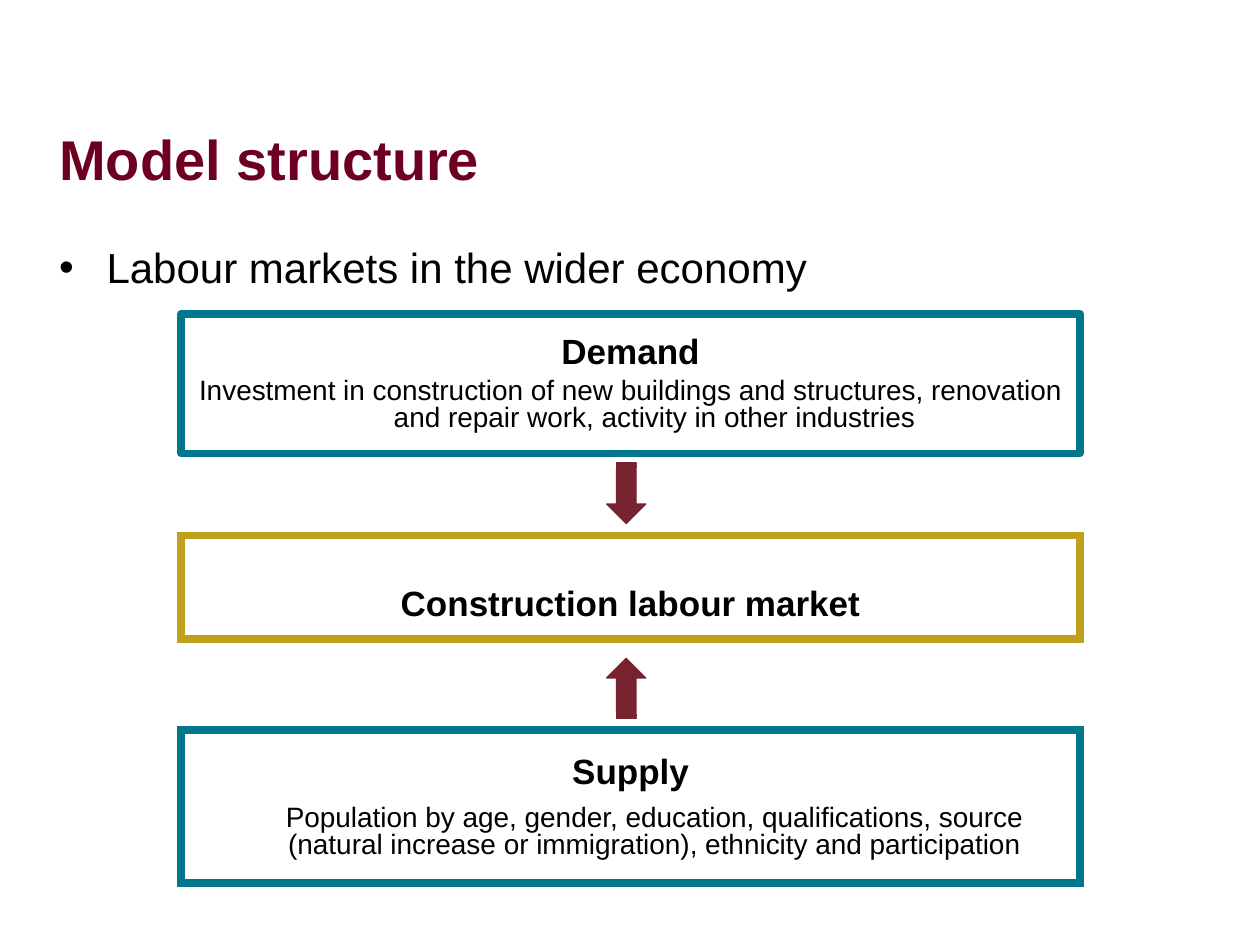
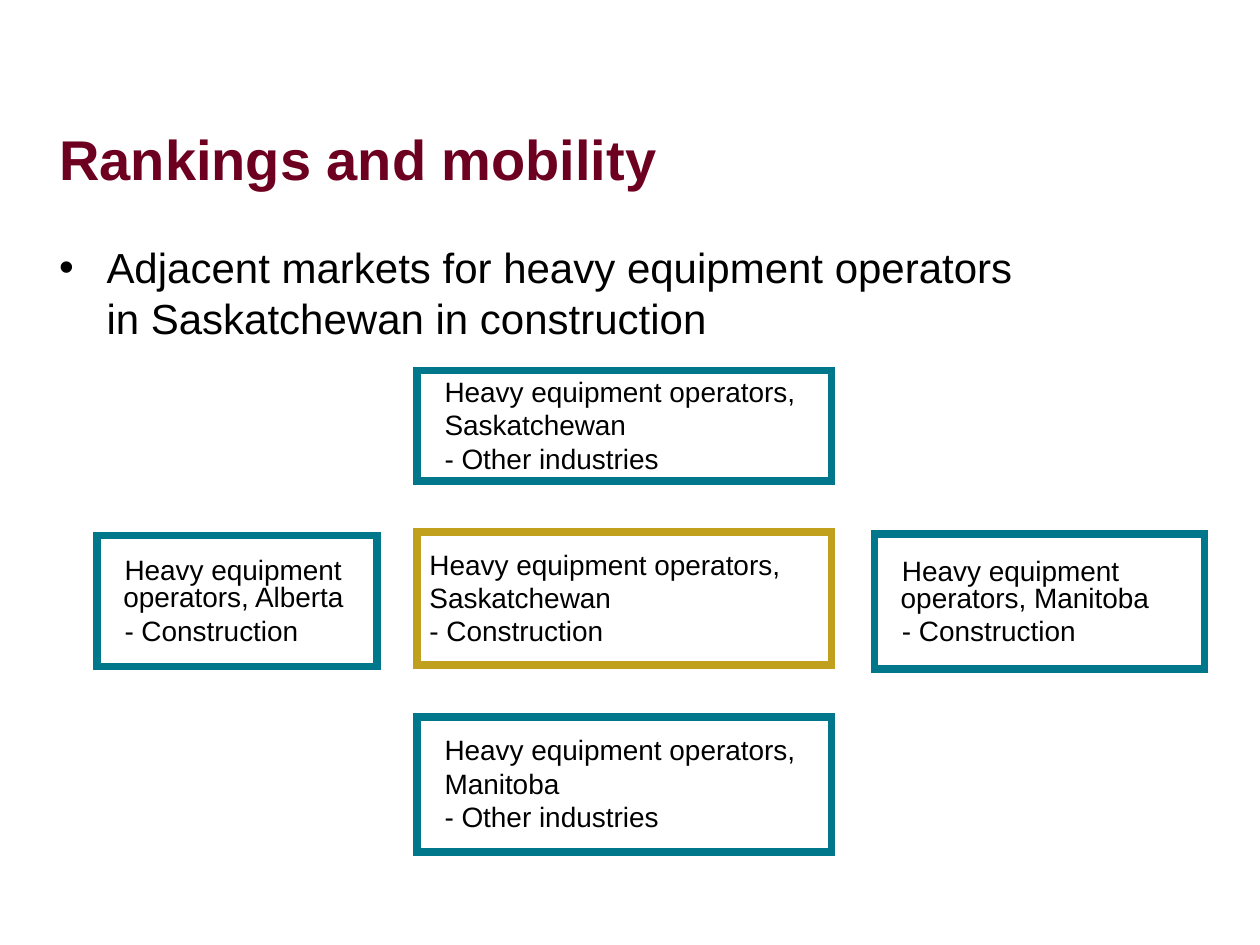
from copy import deepcopy

from lxml.etree import SubElement
from pptx import Presentation
from pptx.dml.color import RGBColor as RGB
from pptx.enum.shapes import MSO_SHAPE as Shape
from pptx.enum.text import MSO_ANCHOR as Anchor, MSO_AUTO_SIZE as Fit, PP_ALIGN as Align
from pptx.oxml.ns import qn
from pptx.util import Inches, Pt

HUES = {"title": "6D0020", "text": "000000", "fill": "FFFFFF",
        "teal": "00778B", "gold": "C1A01E", "arrow": "76232F"}
FORMS = {
    "title": {"size": Pt(32), "bold": True},
    "list": {"size": Pt(24), "bold": False},
    "head": {"size": Pt(20), "bold": True},
    "note": {"size": Pt(16), "bold": False},
}
HANG = (0.38, -0.38)
FLUSH = (0.38, 0)
INSET = (0.11, 0.01)


def rgb(name):
    return RGB.from_string(HUES[name])


class Deck:
    """Holds the style and the current slide."""

    def __init__(self):
        self.prs = Presentation()
        self.prs.slide_width = Inches(10)
        self.prs.slide_height = Inches(7.5)
        self.slide = None

    def place(self, shape, *box):
        for name, val in zip(("left", "top", "width", "height"), box):
            setattr(shape, name, Inches(val))

    def style(self, para, form, hue="text"):
        for run in para.runs:
            run.font.name = "Arial"
            run.font.color.rgb = rgb(hue)
            for name, val in FORMS[form].items():
                setattr(run.font, name, val)
        # A line break takes the format of the text around it
        for gap in para._p.findall(qn("a:br")):
            gap.insert(0, deepcopy(para.runs[0].font._element))

    def page(self, title, point):
        self.slide = self.prs.slides.add_slide(self.prs.slide_layouts[1])
        head, body = self.slide.placeholders
        self.place(head, 0.37, 0.63, 9, 1.25)
        self.place(body, 0.37, 1.87, 9, 4.95)
        for shape, text, form, hue in ((head, title, "title", "title"),
                                       (body, point, "list", "text")):
            frame = shape.text_frame
            frame.text = text
            frame.auto_size = Fit.NONE
            self.style(frame.paragraphs[0], form, hue)
        head.text_frame.vertical_anchor = Anchor.MIDDLE
        head.text_frame.paragraphs[0].alignment = Align.LEFT

    def shape(self, kind, box, fill, line, width):
        item = self.slide.shapes.add_shape(kind, *map(Inches, box))
        item.shadow.inherit = False
        item.fill.solid()
        item.fill.fore_color.rgb = rgb(fill)
        item.line.color.rgb = rgb(line)
        item.line.width = Pt(width)
        return item

    def box(self, box, lines, hue="teal", align=Align.LEFT, pad=0.08,
            anchor=Anchor.MIDDLE, sharp=True):
        """Each line is (text, form, (left, first) indent, space before)."""
        item = self.shape(Shape.RECTANGLE, box, "fill", hue, 4.5)
        if sharp:
            SubElement(item.line._ln, qn("a:miter"), lim="800000")
        frame = item.text_frame
        frame.word_wrap = True
        frame.vertical_anchor = anchor
        frame.margin_top = Inches(pad)
        for i, (text, form, (left, first), gap) in enumerate(lines):
            para = frame.add_paragraph() if i else frame.paragraphs[0]
            para.text = text
            para.alignment = align
            para.line_spacing = 0.8
            para.space_before = Pt(gap if i else 0)
            props = para._p.get_or_add_pPr()
            props.set("marL", str(Inches(left)))
            props.set("indent", str(Inches(first)))
            self.style(para, form)

    def arrow(self, top, turn):
        item = self.shape(Shape.STRIPED_RIGHT_ARROW, (4.73, top, 0.48, 0.31),
                          "arrow", "arrow", 0.75)
        item.rotation = turn


def model(deck):
    deck.page("Model structure", "Labour markets in the wider economy")
    left, wide = 1.44, 7.13
    deck.box((left, 2.49, wide, 1.11), [
        ("Demand", "head", HANG, 0),
        ("Investment in construction of new buildings and structures, renovation "
         "and repair work, activity in other industries", "note", HANG, 4.5),
    ], align=Align.CENTER, sharp=False)
    deck.arrow(3.76, 90)
    deck.box((left, 4.25, wide, 0.82),
             [("Construction labour market", "head", HANG, 0)],
             "gold", Align.CENTER, pad=0.43, anchor=Anchor.TOP)
    deck.arrow(5.31, 270)
    deck.box((left, 5.79, wide, 1.22), [
        ("Supply", "head", HANG, 0),
        ("Population by age, gender, education, qualifications, source "
         "(natural increase or immigration), ethnicity and participation",
         "note", FLUSH, 8.5),
    ], align=Align.CENTER)


def moves(deck):
    deck.page("Rankings and mobility",
              "Adjacent markets for heavy equipment operators\v"
              "in Saskatchewan in construction")
    job = "Heavy equipment operators,"
    other, build = "- Other industries", "- Construction"
    mid, wide = 3.31, 3.29
    # Markets around the central one
    for box, lines, hue, dent in (
        ((mid, 2.94, wide, 0.88), (job, "Saskatchewan", other), "teal", INSET),
        ((0.77, 4.25, 2.22, 1.04), (f"{job} Alberta", build), "teal", INSET),
        ((mid, 4.22, wide, 1.06), (job, "Saskatchewan", build), "gold", HANG),
        ((6.94, 4.24, 2.62, 1.07), (f"{job} Manitoba", build), "teal", INSET),
        ((mid, 5.69, wide, 1.07), (job, "Manitoba", other), "teal", INSET),
    ):
        deck.box(box, [(text, "note", dent, 3.7) for text in lines], hue)


def main():
    deck = Deck()
    model(deck)
    moves(deck)
    deck.prs.save("out.pptx")


if __name__ == "__main__":
    main()
